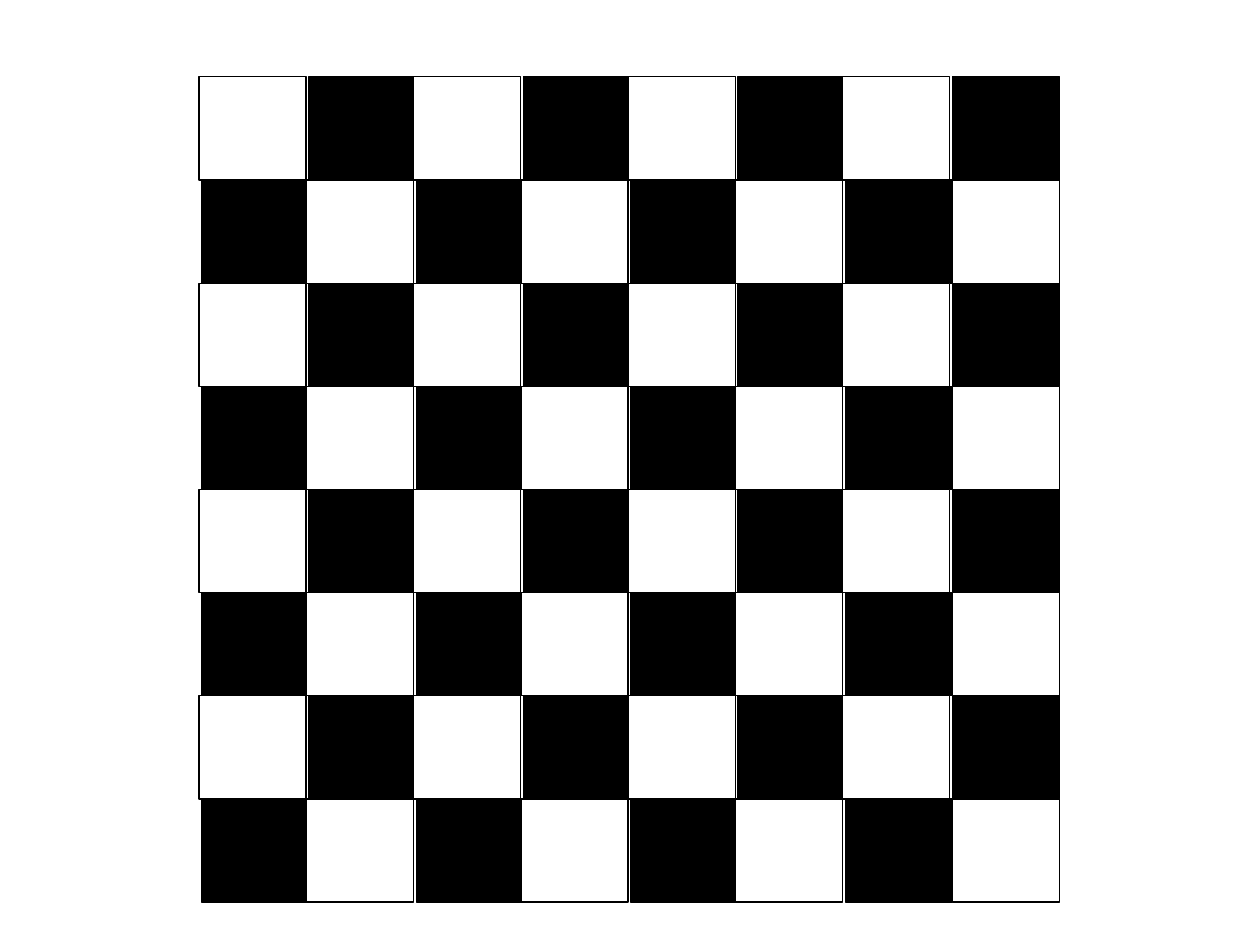
from itertools import product

from pptx import Presentation
from pptx.dml.color import RGBColor
from pptx.enum.shapes import MSO_SHAPE
from pptx.util import Inches, Pt

BLACK = RGBColor(0x00, 0x00, 0x00)
WHITE = RGBColor(0xFF, 0xFF, 0xFF)

SIZE = 8  # squares per side
LEFT, TOP = 1.6, 0.61
RIGHT, BOTTOM = 8.41, 7.16
SQUARE_W, SQUARE_H = 0.85, 0.82
COL_STEP = (RIGHT - LEFT - SQUARE_W) / (SIZE - 1)
ROW_STEP = (BOTTOM - TOP - SQUARE_H) / (SIZE - 1)
WHITE_SHIFT = 0.02  # white squares sit left of the grid, except in the last column


def add_square(board, row, col):
    is_white = (row + col) % 2 == 0
    shift = WHITE_SHIFT if is_white and col < SIZE - 1 else 0
    sp = board.shapes.add_shape(
        MSO_SHAPE.RECTANGLE,
        Inches(LEFT + col * COL_STEP - shift), Inches(TOP + row * ROW_STEP),
        Inches(SQUARE_W), Inches(SQUARE_H))
    sp.shadow.inherit = False
    sp.fill.solid()
    sp.fill.fore_color.rgb = WHITE if is_white else BLACK
    sp.line.color.rgb = BLACK
    sp.line.width = Pt(0.75)


def add_chessboard(s):
    board = s.shapes.add_group_shape()
    for row, col in product(range(SIZE), repeat=2):
        add_square(board, row, col)


def main():
    prs = Presentation()
    prs.slide_width, prs.slide_height = Inches(10), Inches(7.5)
    s = prs.slides.add_slide(prs.slide_layouts.get_by_name("Blank"))
    add_chessboard(s)
    prs.save("out.pptx")


if __name__ == "__main__":
    main()
